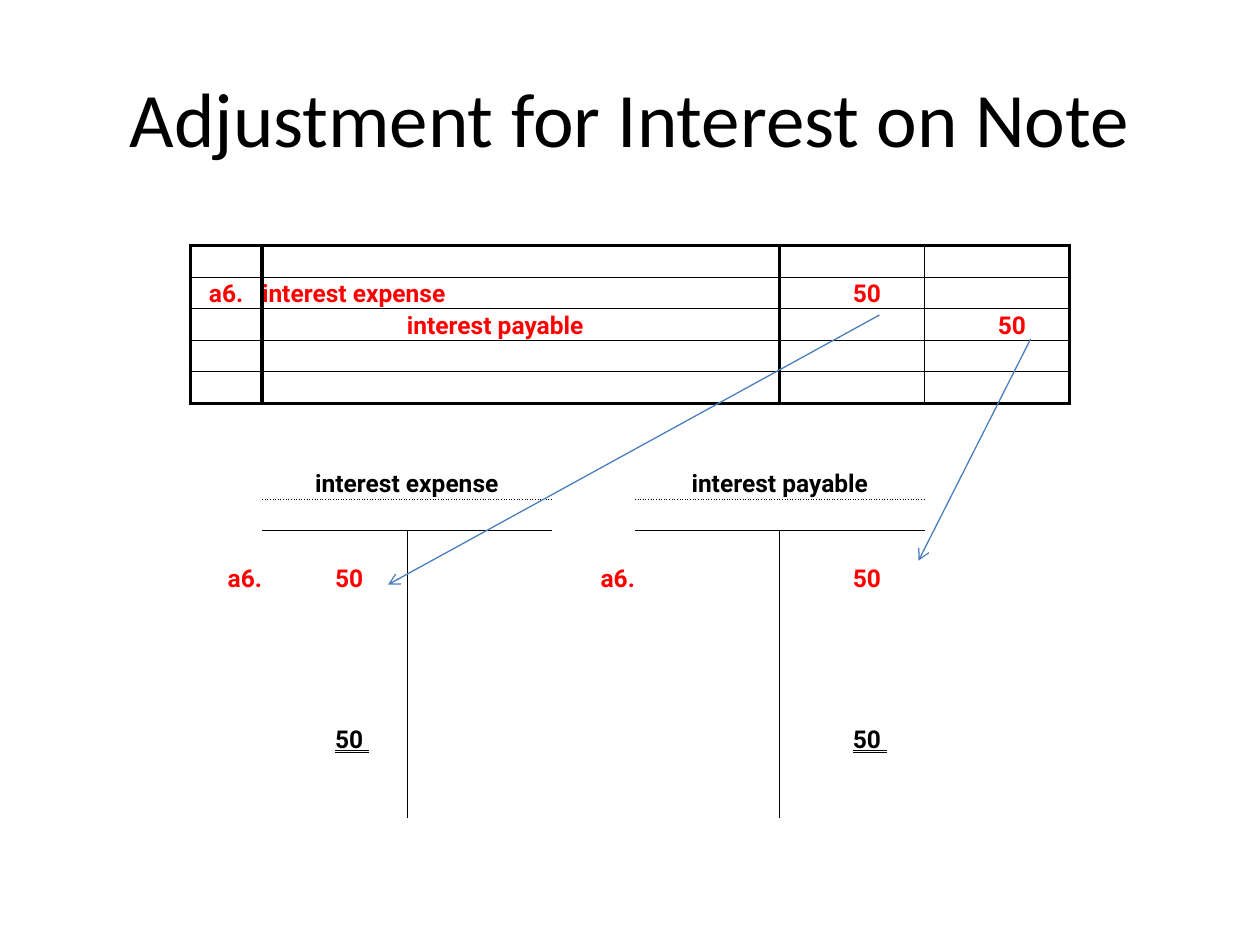
from collections import defaultdict
from dataclasses import dataclass

from lxml.etree import SubElement
from pptx import Presentation
from pptx.dml.color import RGBColor
from pptx.enum.shapes import MSO_CONNECTOR
from pptx.enum.text import MSO_ANCHOR, MSO_UNDERLINE, PP_ALIGN
from pptx.oxml.ns import qn
from pptx.util import Inches, Pt


@dataclass(frozen=True)
class Theme:
    title_font: str = "Calibri"
    ledger_font: str = "Roboto"
    title_size: int = 44
    ledger_size: int = 14
    ink: str = "000000"
    entry: str = "FF0000"
    arrow: str = "4B7EBC"
    heavy: float = 2
    thin: float = 0.5
    arrow_width: float = 0.75
    amount_tab: float = 0.58


NO_STYLE_NO_GRID = "{2D5ABB26-0587-4C30-8999-92F81FD0307C}"


def write_text(frame, text, *, font, size, color, bold=False,
               align=PP_ALIGN.LEFT, underline=None, tab=None):
    paragraph = frame.paragraphs[0]
    paragraph.alignment = align
    if tab:
        tabs = SubElement(paragraph._p.get_or_add_pPr(), qn("a:tabLst"))
        SubElement(tabs, qn("a:tab"), pos=str(Inches(tab)), algn="l")
    run = paragraph.add_run()
    run.text = text
    run.font.name = font
    run.font.size = Pt(size)
    run.font.bold = bold
    run.font.underline = underline
    run.font.color.rgb = RGBColor.from_string(color)


class Borders:
    """Collects ruled lines and gives each one to the cells on both sides."""

    def __init__(self, row_count, column_count):
        self.row_count, self.column_count = row_count, column_count
        self.cells = defaultdict(dict)

    def put(self, row, column, side, style):
        if 0 <= row < self.row_count and 0 <= column < self.column_count:
            self.cells[row, column][side] = style

    def horizontal(self, edge, columns, width, dash="solid"):
        for column in columns:
            self.put(edge - 1, column, "B", (width, dash))
            self.put(edge, column, "T", (width, dash))

    def vertical(self, edge, rows, width, dash="solid"):
        for row in rows:
            self.put(row, edge - 1, "R", (width, dash))
            self.put(row, edge, "L", (width, dash))


class LedgerSlide:
    def __init__(self, slide, theme):
        self.slide = slide
        self.theme = theme

    def title(self, text, left, top, width, height):
        shape = self.slide.shapes.add_textbox(
            Inches(left), Inches(top), Inches(width), Inches(height))
        shape.text_frame.word_wrap = True
        shape.text_frame.vertical_anchor = MSO_ANCHOR.MIDDLE
        write_text(shape.text_frame, text, font=self.theme.title_font,
                   size=self.theme.title_size, color=self.theme.ink,
                   align=PP_ALIGN.CENTER)

    def table(self, left, top, widths, heights, borders):
        shape = self.slide.shapes.add_table(
            len(heights), len(widths), Inches(left), Inches(top),
            Inches(sum(widths)), Inches(sum(heights)))
        table = shape.table
        table.first_row = table.horz_banding = False
        table._tbl.tblPr.find(qn("a:tableStyleId")).text = NO_STYLE_NO_GRID
        for column, width in zip(table.columns, widths):
            column.width = Inches(width)
        for row, height in zip(table.rows, heights):
            row.height = Inches(height)
        for row in range(len(heights)):
            for column in range(len(widths)):
                self.format_cell(table.cell(row, column),
                                 borders.cells[row, column])
        return table

    def format_cell(self, cell, sides):
        cell.margin_left = cell.margin_right = 0
        cell.margin_top = cell.margin_bottom = 0
        cell.vertical_anchor = MSO_ANCHOR.BOTTOM
        properties = cell._tc.get_or_add_tcPr()
        # Every side is stated, so that an open side stays without a line
        for side in "LRTB":
            width, dash = sides.get(side, (0, None))
            line = SubElement(properties, qn(f"a:ln{side}"), w=str(Pt(width)))
            if dash:
                fill = SubElement(line, qn("a:solidFill"))
                SubElement(fill, qn("a:srgbClr"), val=self.theme.ink)
                SubElement(line, qn("a:prstDash"), val=dash)
            else:
                SubElement(line, qn("a:noFill"))
        cell.fill.background()
        # Empty cells need the small type size too, or their rows grow
        SubElement(cell.text_frame.paragraphs[0]._p, qn("a:endParaRPr"),
                   sz=str(self.theme.ledger_size * 100))

    def entry(self, table, row, column, text, span=1, **style):
        cell = table.cell(row, column)
        if span > 1:
            cell.merge(table.cell(row, column + span - 1))
        style = {"color": self.theme.entry, **style}
        write_text(cell.text_frame, text, font=self.theme.ledger_font,
                   size=self.theme.ledger_size, bold=True, **style)

    def amount(self, table, row, column, text, **style):
        self.entry(table, row, column, f"\t{text} ",
                   tab=self.theme.amount_tab, **style)

    def arrow(self, start, end):
        connector = self.slide.shapes.add_connector(
            MSO_CONNECTOR.STRAIGHT, *map(Inches, start + end))
        connector.line.color.rgb = RGBColor.from_string(self.theme.arrow)
        connector.line.width = Pt(self.theme.arrow_width)
        SubElement(connector.line._get_or_add_ln(), qn("a:tailEnd"), type="arrow")
        SubElement(connector._element.spPr, qn("a:effectLst"))


def ledger_borders(theme, row_count, column_count):
    borders = Borders(row_count, column_count)
    # Journal: five rows in a heavy frame
    for edge in range(6):
        width = theme.heavy if edge in (0, 5) else theme.thin
        borders.horizontal(edge, range(column_count), width)
    for edge in (0, 1, 5, 6, 7):
        width = theme.thin if edge == 6 else theme.heavy
        borders.vertical(edge, range(5), width)
    # T accounts: dotted name line, crossbar and stem
    for first in (1, 4):
        sides = (first, first + 1)
        borders.horizontal(8, sides, theme.thin, "dot")
        borders.horizontal(9, sides, theme.thin)
        borders.vertical(first + 1, range(9, row_count), theme.thin)
    return borders


def main():
    presentation = Presentation()
    presentation.slide_width, presentation.slide_height = Inches(10), Inches(7.5)
    theme = Theme()
    ledger = LedgerSlide(
        presentation.slides.add_slide(presentation.slide_layouts[6]), theme)
    ledger.title("Adjustment for Interest on Note", 0.5, 0.3, 9, 1.25)

    # Grid shared by the journal and the T accounts
    widths = [0.57, 1.15, 1.15, 0.66, 1.15, 1.15, 1.15]
    heights = [0.25] * 18
    heights[5], heights[15] = 0.26, 0.28
    borders = ledger_borders(theme, len(heights), len(widths))
    table = ledger.table(1.51, 1.95, widths, heights, borders)

    # Journal entry
    ledger.entry(table, 1, 0, "a6.", align=PP_ALIGN.CENTER)
    ledger.entry(table, 1, 1, "interest expense", span=2)
    ledger.amount(table, 1, 5, "50")
    ledger.entry(table, 2, 2, "interest payable", span=2)
    ledger.amount(table, 2, 6, "50")

    # T accounts: name, first column, column of the amount
    for name, first, amount_column in (("interest expense", 1, 1),
                                       ("interest payable", 4, 5)):
        ledger.entry(table, 7, first, name, span=2, color=theme.ink,
                     align=PP_ALIGN.CENTER)
        ledger.entry(table, 10, first - 1, "a6.", align=PP_ALIGN.RIGHT)
        ledger.amount(table, 10, amount_column, "50")
        ledger.amount(table, 15, amount_column, "50", color=theme.ink,
                      underline=MSO_UNDERLINE.DOUBLE_LINE)

    # Postings from the journal to the accounts
    ledger.arrow((6.98, 2.5), (3.08, 4.64))
    ledger.arrow((8.18, 2.69), (7.29, 4.45))
    presentation.save("out.pptx")


if __name__ == "__main__":
    main()
